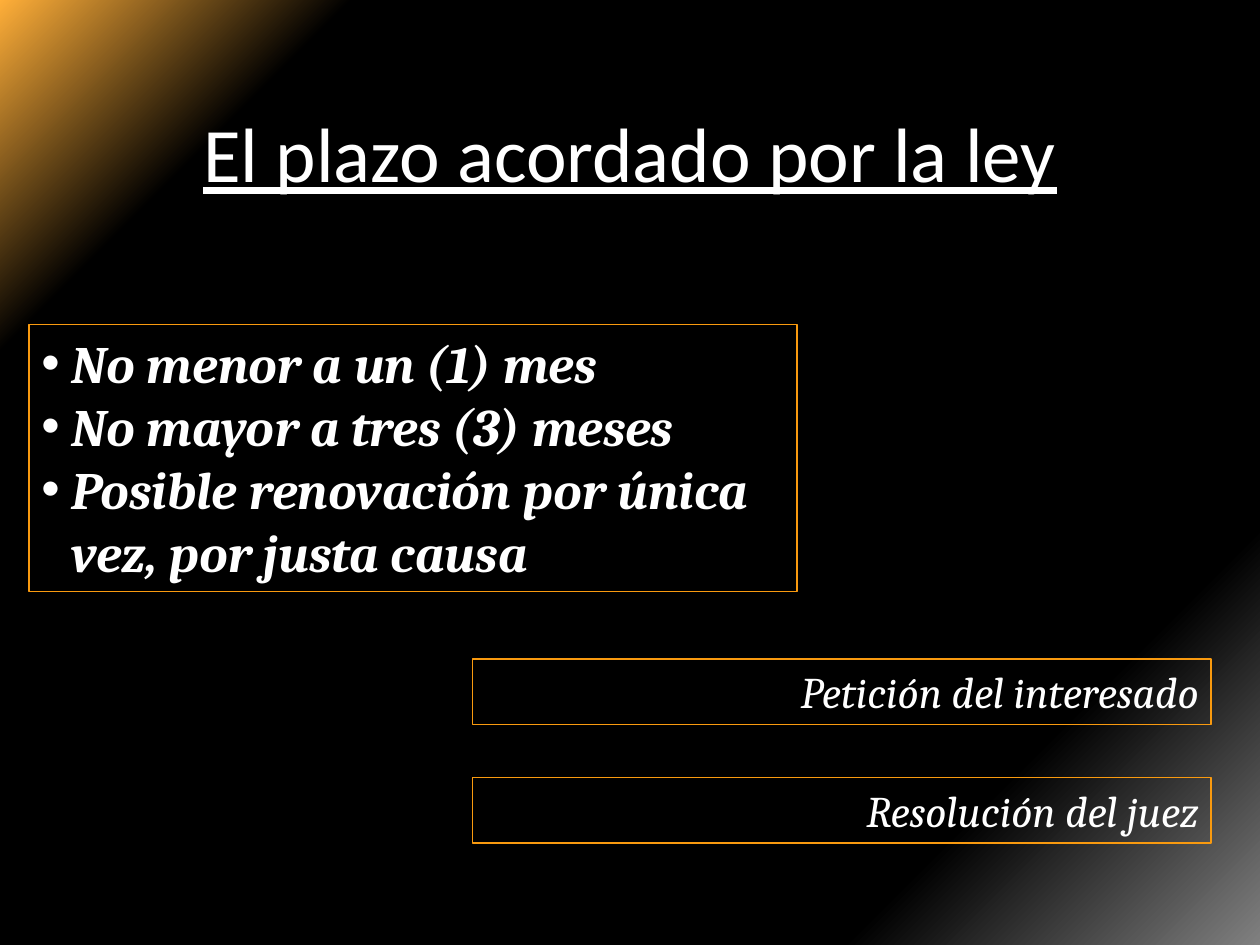
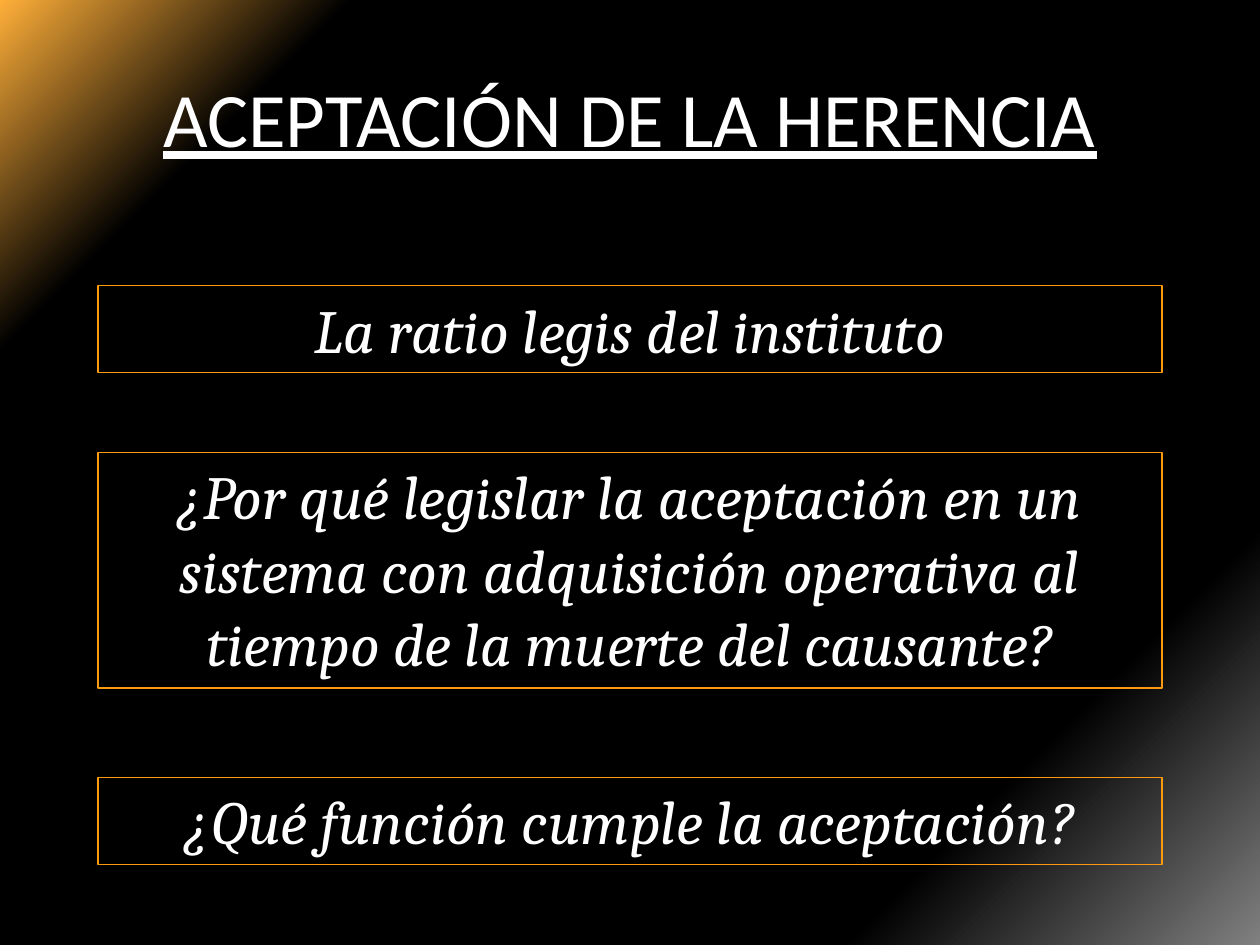
from dataclasses import dataclass

from lxml.etree import SubElement
from pptx import Presentation
from pptx.dml.color import RGBColor
from pptx.enum.shapes import MSO_SHAPE
from pptx.enum.text import MSO_ANCHOR, MSO_AUTO_SIZE, PP_ALIGN
from pptx.oxml.ns import qn
from pptx.slide import Slide
from pptx.text.text import TextFrame
from pptx.util import Pt

WHITE = RGBColor(0xFF, 0xFF, 0xFF)
BLACK = RGBColor(0x00, 0x00, 0x00)
GOLD = RGBColor(0xFF, 0xAF, 0x39)
GRAY = RGBColor(0x80, 0x80, 0x80)
EDGE = RGBColor(0xF9, 0x9A, 0x0F)

WIDTH, HEIGHT = 720, 540
GLOW = ((0, GOLD), (16, BLACK), (81, BLACK), (100, GRAY))
HANG = 17
TITLE = {"name": "Calibri", "size": Pt(44), "underline": True}
ITALIC = {"name": "Cambria", "italic": True}


@dataclass(frozen=True)
class Panel:
    """A framed text, measured in points."""

    left: float
    top: float
    width: float
    height: float
    size: float
    lines: tuple[str, ...]
    align: PP_ALIGN = PP_ALIGN.CENTER
    list: bool = False


@dataclass(frozen=True)
class Page:
    """A slide with its title and panels."""

    title: str
    depth: float
    panels: tuple[Panel, ...]


def small(top: float, text: str) -> Panel:
    """Return a right-aligned panel for one step."""
    return Panel(270, top, 422, 37.5, 25, (text,), PP_ALIGN.RIGHT)


def wide(top: float, height: float, text: str) -> Panel:
    """Return a panel centred across the slide."""
    width = 608
    return Panel((WIDTH - width) / 2, top, width, height, 35, (text,))


PAGES = (
    Page("El plazo acordado por la ley", 130.5, (
        Panel(16.5, 185.5, 439, 152.5, 30, (
            "No menor a un (1) mes",
            "No mayor a tres (3) meses",
            "Posible renovación por única vez, por justa causa",
        ), PP_ALIGN.LEFT, True),
        small(376.5, "Petición del interesado"),
        small(444.25, "Resolución del juez"),
    )),
    Page("ACEPTACIÓN DE LA HERENCIA", 90, (
        wide(163.25, 49.75, "La ratio legis del instituto"),
        wide(258.5, 134.75, "¿Por qué legislar la aceptación en un sistema con "
             "adquisición operativa al tiempo de la muerte del causante?"),
        wide(444.25, 49.75, "¿Qué función cumple la aceptación?"),
    )),
)


def paint(slide: Slide) -> None:
    """Fill the background with the diagonal glow."""
    fill = slide.background.fill
    fill.gradient()
    fill.gradient_angle = 315
    stops = slide.element.find(".//" + qn("a:gsLst"))
    for stop in list(stops):
        stops.remove(stop)
    for place, color in GLOW:
        stop = SubElement(stops, qn("a:gs"), pos=str(place * 1000))
        SubElement(stop, qn("a:srgbClr"), val=str(color))


def write(frame: TextFrame, lines: tuple[str, ...], align: PP_ALIGN,
          style: dict, list: bool = False) -> None:
    """Write one paragraph a line in the given style."""
    frame.word_wrap = True
    for index, line in enumerate(lines):
        para = frame.add_paragraph() if index else frame.paragraphs[0]
        para.alignment = align
        if list:
            props = para._p.get_or_add_pPr()
            props.set("marL", str(Pt(HANG)))
            props.set("indent", str(-Pt(HANG)))
            SubElement(props, qn("a:buFont"), typeface="Arial")
            SubElement(props, qn("a:buChar"), char="•")
        run = para.add_run()
        run.text = line
        run.font.color.rgb = WHITE
        for key, value in style.items():
            setattr(run.font, key, value)


def head(slide: Slide, text: str, depth: float) -> None:
    """Add the underlined title."""
    side = 36
    box = slide.shapes.add_textbox(
        Pt(side), Pt(21.5), Pt(WIDTH - 2 * side), Pt(depth))
    box.text_frame.vertical_anchor = MSO_ANCHOR.MIDDLE
    write(box.text_frame, (text,), PP_ALIGN.CENTER, TITLE)


def draw(slide: Slide, panel: Panel) -> None:
    """Add one framed panel."""
    place = (panel.left, panel.top, panel.width, panel.height)
    box = slide.shapes.add_shape(MSO_SHAPE.RECTANGLE, *map(Pt, place))
    box.shadow.inherit = False
    box.fill.background()
    box.line.color.rgb = EDGE
    box.line.width = Pt(0.75)
    frame = box.text_frame
    frame.vertical_anchor = MSO_ANCHOR.TOP
    frame.auto_size = MSO_AUTO_SIZE.SHAPE_TO_FIT_TEXT
    style = ITALIC | {"size": Pt(panel.size), "bold": panel.list}
    write(frame, panel.lines, panel.align, style, panel.list)


def main() -> None:
    """Build and save the slides."""
    deck = Presentation()
    deck.slide_width, deck.slide_height = Pt(WIDTH), Pt(HEIGHT)
    for page in PAGES:
        slide = deck.slides.add_slide(deck.slide_layouts[6])
        paint(slide)
        head(slide, page.title, page.depth)
        for panel in page.panels:
            draw(slide, panel)
    deck.save("out.pptx")


if __name__ == "__main__":
    main()
